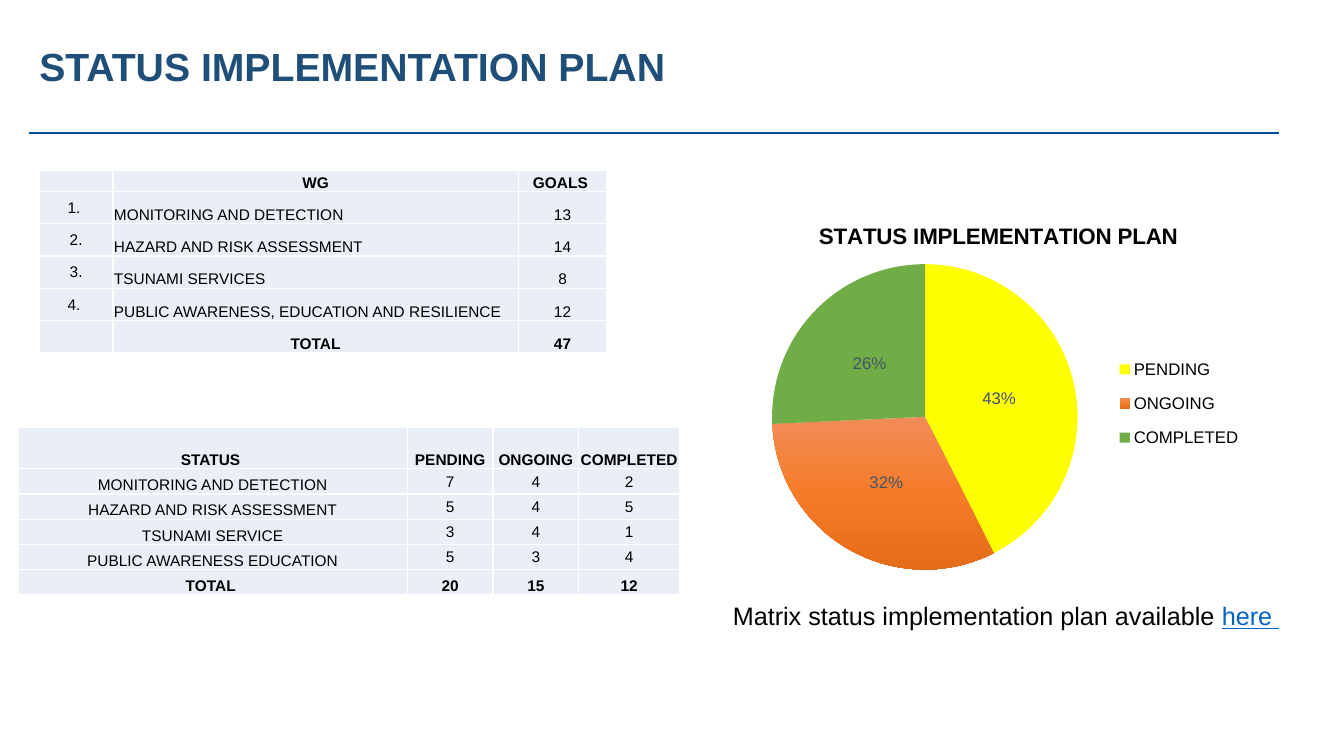
import copy

import pptx
import pptx.chart.data
import pptx.dml.color
import pptx.enum.chart
import pptx.enum.shapes
import pptx.enum.text
import pptx.oxml
import pptx.oxml.ns
import pptx.util
from lxml import etree
from pptx.util import Inches

ALIGN = pptx.enum.text.PP_ALIGN
ANCHOR = pptx.enum.text.MSO_ANCHOR
qn = pptx.oxml.ns.qn


def color(value):
    return pptx.dml.color.RGBColor.from_string(value)


def set_layout(element, index, x, y, width=None, height=None):
    """Place a chart part by fractions of the chart's size."""
    for old in element.findall(qn("c:layout")):
        element.remove(old)
    layout = etree.Element(qn("c:layout"))
    manual = etree.SubElement(layout, qn("c:manualLayout"))
    if element.tag == qn("c:plotArea"):
        etree.SubElement(manual, qn("c:layoutTarget"), val="inner")
    for name in ("xMode", "yMode"):
        etree.SubElement(manual, qn("c:" + name), val="edge")
    for name, value in zip("xywh", (x, y, width, height)):
        if value is not None:
            etree.SubElement(manual, qn("c:" + name), val=str(value))
    element.insert(index, layout)


class StatusSlide:
    font_name = "Arial"
    black, heading, rule, link = "000000", "1F4E79", "014F92", "0563C1"
    cell_fill, cell_border = "EAEFF7", "FFFFFF"

    def __init__(self, presentation):
        self.slide = presentation.slides.add_slide(presentation.slide_layouts[5])

    def style(self, font, size, fill=black, bold=False):
        font.name, font.size, font.bold = self.font_name, pptx.util.Pt(size), bold
        font.color.rgb = color(fill)

    def title(self, text, left, top, width, height):
        shape = self.slide.shapes.title
        shape.left, shape.top, shape.width, shape.height = map(
            Inches, (left, top, width, height))
        frame = shape.text_frame
        frame.text = text
        frame.vertical_anchor = ANCHOR.TOP
        paragraph = frame.paragraphs[0]
        paragraph.alignment, paragraph.line_spacing = ALIGN.LEFT, 0.9
        self.style(paragraph.runs[0].font, 28, self.heading, True)

    def line(self, left, right, y):
        connector = self.slide.shapes.add_connector(
            pptx.enum.shapes.MSO_CONNECTOR.STRAIGHT,
            Inches(left), Inches(y), Inches(right), Inches(y))
        connector.line.color.rgb = color(self.rule)
        connector.line.width = pptx.util.Pt(1.75)
        etree.SubElement(connector._element.spPr, qn("a:effectLst"))

    def cell(self, cell, text, bold, alignment, anchor):
        cell.text = text
        cell.margin_left = cell.margin_right = cell.margin_top = Inches(0.01)
        cell.margin_bottom = 0
        cell.vertical_anchor = anchor
        cell.fill.solid()
        cell.fill.fore_color.rgb = color(self.cell_fill)
        properties = cell._tc.get_or_add_tcPr()
        for index, side in enumerate("LRTB"):
            border = etree.Element(qn("a:ln" + side), w="12700")
            fill = etree.SubElement(border, qn("a:solidFill"))
            etree.SubElement(fill, qn("a:srgbClr"), val=self.cell_border)
            properties.insert(index, border)
        paragraph = cell.text_frame.paragraphs[0]
        paragraph.alignment = alignment
        for run in paragraph.runs:
            self.style(run.font, 11, bold=bold)
        if not text:
            etree.SubElement(paragraph._p, qn("a:endParaRPr"), sz="1100")

    def table(self, rows, left, top, widths, heights, left_column, middle_columns):
        """The first and last rows are bold and sit at the bottom of their cells."""
        table = self.slide.shapes.add_table(
            len(rows), len(widths), Inches(left), Inches(top),
            Inches(sum(widths)), Inches(sum(heights))).table
        table.first_row = table.horz_banding = False
        for column, width in zip(table.columns, widths):
            column.width = Inches(width)
        for row, height in zip(table.rows, heights):
            row.height = Inches(height)
        for i, row in enumerate(rows):
            outer = i in (0, len(rows) - 1)
            for j, text in enumerate(row):
                at_left = not outer and j == left_column
                in_middle = not outer and j in middle_columns
                self.cell(table.cell(i, j), text, outer,
                          ALIGN.LEFT if at_left else ALIGN.CENTER,
                          ANCHOR.MIDDLE if in_middle else ANCHOR.BOTTOM)

    def pie(self, title, shares, left, top, width, height):
        data = pptx.chart.data.CategoryChartData()
        data.categories = list(shares)
        data.add_series("Series 1", [value for value, _ in shares.values()])
        chart = self.slide.shapes.add_chart(
            pptx.enum.chart.XL_CHART_TYPE.PIE, Inches(left), Inches(top),
            Inches(width), Inches(height), data).chart
        self.style(chart.font, 10)
        chart.font.name = "Calibri"

        frame = chart.chart_title.text_frame
        frame.text = title
        self.style(frame.paragraphs[0].runs[0].font, 16, bold=True)
        set_layout(chart.chart_title._element, 1, 0.2, 0.05)

        chart.has_legend = True
        chart.legend.position = pptx.enum.chart.XL_LEGEND_POSITION.RIGHT
        chart.legend.include_in_layout = False
        self.style(chart.legend.font, 12)
        set_layout(chart.legend._element, 1, 0.69, 0.38, 0.22, 0.31)

        plot = chart.plots[0]
        plot.vary_by_categories = True
        set_layout(plot._element.getparent(), 0, 0.13, 0.17, 0.5, 0.8)
        series = plot.series[0]
        for index, (_, colors) in enumerate(shares.values()):
            fill = series.points[index].format.fill
            if len(colors) == 1:
                fill.solid()
                fill.fore_color.rgb = color(colors[0])
            else:
                self.gradient(fill, colors)

        labels = series.data_labels
        labels.show_percentage, labels.show_value = True, False
        labels.number_format, labels.number_format_is_linked = "0%", False
        labels.position = pptx.enum.chart.XL_LABEL_POSITION.CENTER
        self.style(labels.font, 12, "44546A")

    def gradient(self, fill, colors):
        """Fill from top to bottom with three evenly spaced colours."""
        fill.gradient()
        fill.gradient_angle = 270
        first = fill.gradient_stops[0]._gs
        first.addnext(copy.deepcopy(first))
        for index, (stop, value) in enumerate(zip(fill.gradient_stops, colors)):
            stop.position = index / 2
            stop.color.rgb = color(value)

    def note(self, text, link_text, left, top, width, height):
        frame = self.slide.shapes.add_textbox(
            Inches(left), Inches(top), Inches(width), Inches(height)).text_frame
        frame.word_wrap = True
        paragraph = frame.paragraphs[0]
        paragraph.space_after = pptx.util.Pt(6)
        for words, fill in ((text, self.black), (link_text, self.link)):
            run = paragraph.add_run()
            run.text = words
            self.style(run.font, 18, fill)
            run.font.underline = fill == self.link


def main():
    presentation = pptx.Presentation()
    presentation.slide_width, presentation.slide_height = Inches(13.33), Inches(7.5)
    page = StatusSlide(presentation)

    # Heading
    page.title("STATUS IMPLEMENTATION PLAN", 0.29, 0.42, 7.89, 0.72)

    # Goals of each working group
    page.table([
        ("", "WG", "GOALS "),
        ("1. ", "MONITORING AND DETECTION", "13"),
        ("2.", "HAZARD AND RISK ASSESSMENT", "14"),
        ("3.", "TSUNAMI SERVICES", "8"),
        ("4. ", "PUBLIC AWARENESS, EDUCATION AND RESILIENCE", "12"),
        ("", "TOTAL", "47"),
    ], 0.39, 1.69, (0.73, 4.02, 0.88), [0.21] + [0.32] * 5, 1, (0,))

    # Status of the goals
    page.table([
        ("STATUS ", "PENDING", "ONGOING", "COMPLETED "),
        ("MONITORING AND DETECTION", "7", "4", "2"),
        ("HAZARD AND RISK ASSESSMENT", "5", "4", "5"),
        ("TSUNAMI SERVICE", "3", "4", "1"),
        ("PUBLIC AWARENESS EDUCATION", "5", "3", "4"),
        ("TOTAL ", "20", "15", "12"),
    ], 0.18, 4.24, (3.86, 0.85, 0.85, 1), [0.41] + [0.25] * 5, None, (1, 2, 3))

    # Shares by status
    page.pie("STATUS IMPLEMENTATION PLAN", {
        "PENDING": (43, ["FFFF00"]),
        "ONGOING": (32, ["F18C57", "F67B28", "E56C19"]),
        "COMPLETED ": (26, ["70AD47"]),
    }, 6.87, 1.97, 6.06, 3.8)

    # Rule and closing note
    page.line(0.29, 12.69, 1.32)
    page.note("Matrix status implementation plan available ", "here ",
              7.17, 5.91, 5.76, 0.4)

    presentation.save("out.pptx")


if __name__ == "__main__":
    main()
